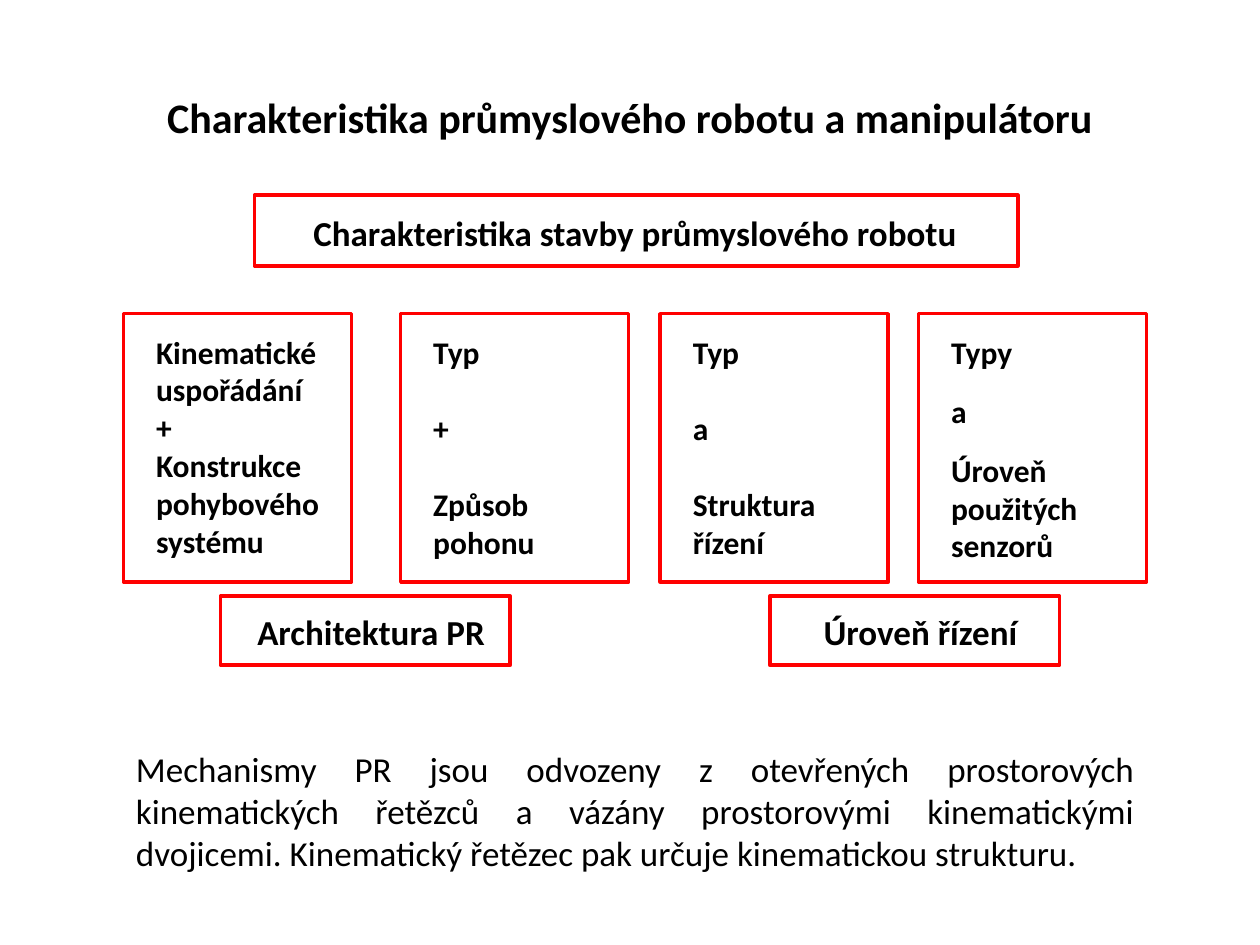
from dataclasses import dataclass

from pptx import Presentation
from pptx.dml.color import RGBColor
from pptx.enum.shapes import MSO_SHAPE as Shape
from pptx.enum.text import MSO_ANCHOR as Anchor, PP_ALIGN as Align
from pptx.slide import Slide
from pptx.util import Inches, Pt

RED = RGBColor(0xFF, 0x00, 0x00)
BLACK = RGBColor(0x00, 0x00, 0x00)
FONT = "Calibri"


@dataclass
class Box:
    left: float
    top: float
    width: float
    height: float

    def lengths(self) -> list:
        return [Inches(n) for n in (self.left, self.top, self.width, self.height)]


@dataclass
class Label:
    text: str
    frame: Box
    area: Box


@dataclass
class Panel:
    left: float
    lines: list[str]
    gap: float = 0
    spaced: tuple[int, ...] = ()


TITLE = "Charakteristika průmyslového robotu a manipulátoru"
NOTE = (
    "Mechanismy PR jsou odvozeny z otevřených prostorových kinematických řetězců "
    "a vázány prostorovými kinematickými dvojicemi. "
    "Kinematický řetězec pak určuje kinematickou strukturu."
)
LABELS = [
    Label("Charakteristika stavby průmyslového robotu",
          Box(2.02, 1.55, 6.06, 0.56), Box(2.1, 1.63, 5.88, 0.44)),
    Label("Architektura PR", Box(1.75, 4.73, 2.3, 0.55), Box(1.84, 4.8, 2.21, 0.44)),
    Label("Úroveň řízení", Box(6.11, 4.73, 2.3, 0.55), Box(6.2, 4.8, 2.21, 0.44)),
]
# Gaps are in points and stand before the lines listed in spaced.
PANELS = [
    Panel(0.98, ["Kinematické", "uspořádání", "+", "Konstrukce pohybového systému"]),
    Panel(3.18, ["Typ", "+", "Způsob", "pohonu"], 22, (1, 2)),
    Panel(5.24, ["Typ", "a", "Struktura", "řízení"], 22, (1, 2)),
    Panel(7.29, ["Typy", "a", "Úroveň použitých senzorů"], 12.2, (1, 2)),
]


def add_frame(slide: Slide, box: Box) -> None:
    frame = slide.shapes.add_shape(Shape.RECTANGLE, *box.lengths())
    frame.shadow.inherit = False
    frame.fill.background()
    frame.line.color.rgb = RED
    frame.line.width = Pt(2)


def add_text(slide: Slide, box: Box, lines: list[str], size: int, align: Align,
             bold: bool = True, anchor: Anchor = Anchor.TOP) -> list:
    """Add a wrapped text box and return its paragraphs."""
    frame = slide.shapes.add_textbox(*box.lengths()).text_frame
    frame.word_wrap = True
    frame.vertical_anchor = anchor
    frame.text = "\n".join(lines)
    for para in frame.paragraphs:
        para.alignment = align
        font = para.font
        font.name, font.size, font.bold = FONT, Pt(size), bold
        font.color.rgb = BLACK
    return list(frame.paragraphs)


def add_label(slide: Slide, label: Label) -> None:
    add_text(slide, label.area, [label.text], 20, Align.CENTER)
    add_frame(slide, label.frame)


def add_panel(slide: Slide, panel: Panel) -> None:
    add_frame(slide, Box(panel.left, 2.49, 1.81, 2.13))
    area = Box(panel.left + 0.16, 2.59, 1.5, 1.92)
    paras = add_text(slide, area, panel.lines, 18, Align.JUSTIFY)
    for index in panel.spaced:
        paras[index].space_before = Pt(panel.gap)


def main() -> None:
    deck = Presentation()
    deck.slide_width, deck.slide_height = Inches(10), Inches(7.5)
    slide = deck.slides.add_slide(deck.slide_layouts[6])
    add_text(slide, Box(0.5, 0.3, 9, 1.25), [TITLE], 24, Align.CENTER,
             anchor=Anchor.MIDDLE)
    for label in LABELS:
        add_label(slide, label)
    for panel in PANELS:
        add_panel(slide, panel)
    note = add_text(slide, Box(0.98, 5.88, 8.12, 1.11), [NOTE], 20, Align.JUSTIFY,
                    bold=False)
    note[0].space_before = Pt(10)
    deck.save("out.pptx")


if __name__ == "__main__":
    main()
